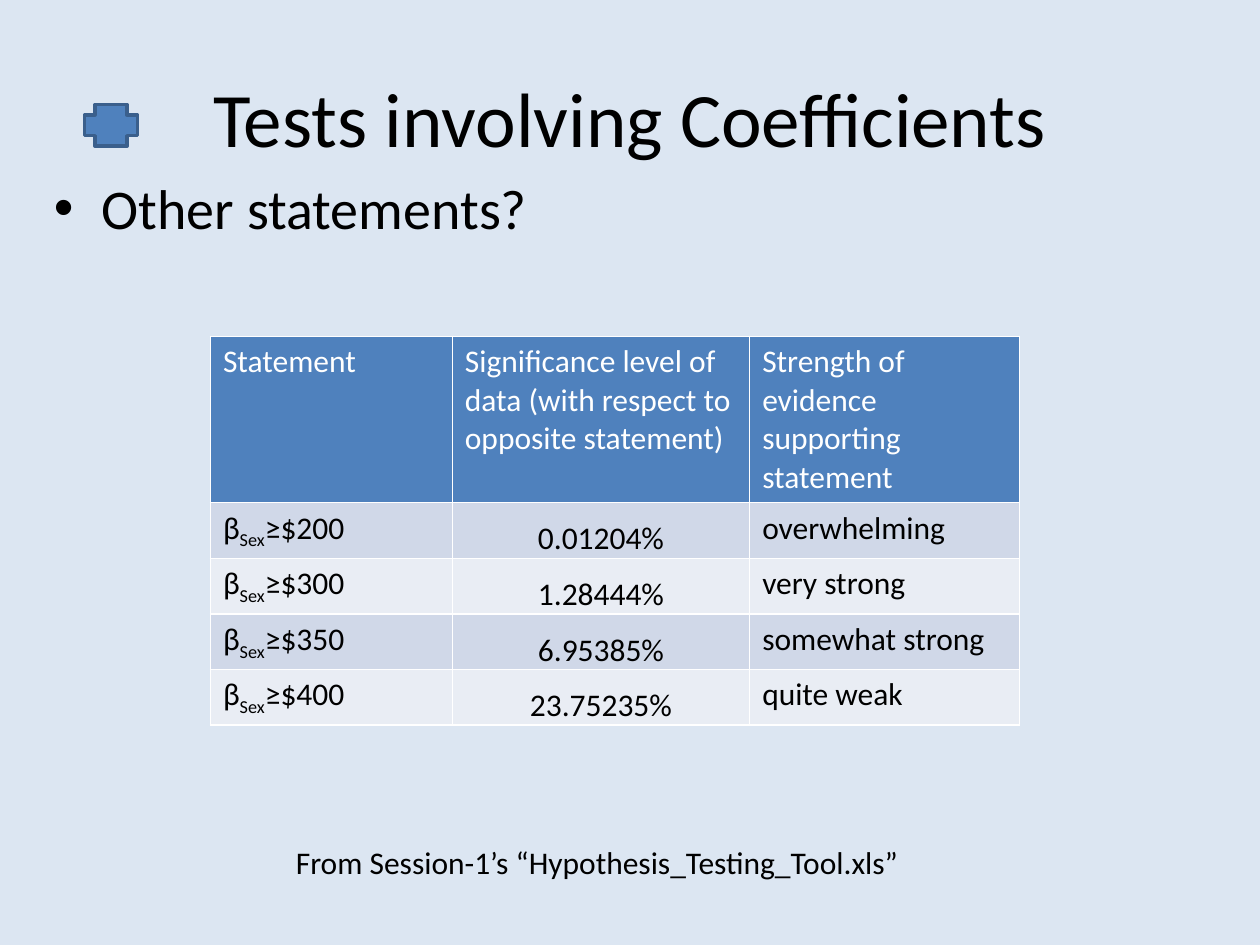
import pptx
import pptx.util
import pptx.dml.color
import pptx.enum.shapes
import pptx.enum.text
import pptx.oxml.ns
import lxml.etree

Inches = pptx.util.Inches
Pt = pptx.util.Pt
align = pptx.enum.text.PP_ALIGN
anchor = pptx.enum.text.MSO_ANCHOR
qn = pptx.oxml.ns.qn


def color(text):
    return pptx.dml.color.RGBColor.from_string(text)


def write(para, text, size, ink="000000", base=0):
    run = para.add_run()
    run.text = text
    form = {"name": "Calibri", "size": Pt(size), "bold": False}
    for key, value in form.items():
        setattr(run.font, key, value)
    run.font.color.rgb = color(ink)
    if base:
        run.font._element.set("baseline", str(base))


deck = pptx.Presentation()
deck.slide_width = Inches(10)
deck.slide_height = Inches(7.5)
slide = deck.slides.add_slide(deck.slide_layouts[6])
slide.background.fill.solid()
slide.background.fill.fore_color.rgb = color("DCE6F2")

texts = [
    ("Tests involving Coefficients", 44, (0.5, 0.3, 9, 1.25), anchor.MIDDLE, align.CENTER),
    ("Other statements?", 32, (0.33, 1.33, 9.33, 1), anchor.TOP, align.LEFT),
    ("From Session-1’s “Hypothesis_Testing_Tool.xls”", 18, (2.25, 6.64, 5.9, 0.4), anchor.TOP, align.LEFT),
]
for text, size, spot, hold, side in texts:
    box = slide.shapes.add_textbox(*map(Inches, spot))
    form = {"word_wrap": True, "vertical_anchor": hold}
    for key, value in form.items():
        setattr(box.text_frame, key, value)
    para = box.text_frame.paragraphs[0]
    para.alignment = side
    write(para, text, size)
    if size == 32:
        props = para._p.get_or_add_pPr()
        props.set("marL", str(Inches(0.38)))
        props.set("indent", str(-Inches(0.38)))
        lxml.etree.SubElement(props, qn("a:buFont"), typeface="Arial")
        lxml.etree.SubElement(props, qn("a:buChar"), char="•")
        para.space_before = Pt(6.4)

rows = [
    ("Statement", "Significance level of data (with respect to opposite statement)",
     "Strength of evidence supporting statement"),
    ("≥$200", "0.01204%", "overwhelming"),
    ("≥$300", "1.28444%", "very strong"),
    ("≥$350", "6.95385%", "somewhat strong"),
    ("≥$400", "23.75235%", "quite weak"),
]
wides = [1.92, 2.36, 2.14]
highs = [1.32] + [0.44] * 4
frame = slide.shapes.add_table(
    len(rows), len(wides), Inches(1.67), Inches(2.67), Inches(sum(wides)), Inches(sum(highs)))
table = frame.table
for col, wide in zip(table.columns, wides):
    col.width = Inches(wide)
for row, high in zip(table.rows, highs):
    row.height = Inches(high)

tight = {
    "margin_left": Inches(0.01), "margin_right": Inches(0.01),
    "margin_top": Inches(0.01), "margin_bottom": 0,
    "vertical_anchor": anchor.BOTTOM,
}
for i, row in enumerate(rows):
    for j, text in enumerate(row):
        cell = table.cell(i, j)
        props = cell._tc.get_or_add_tcPr()
        for edge in "LRTB":
            line = lxml.etree.SubElement(props, qn("a:ln" + edge), w=str(Pt(1)))
            fill = lxml.etree.SubElement(line, qn("a:solidFill"))
            lxml.etree.SubElement(fill, qn("a:srgbClr"), val="FFFFFF")
        cell.fill.solid()
        cell.fill.fore_color.rgb = color("4F81BD" if i == 0 else "D0D8E8" if i % 2 else "E9EDF4")
        para = cell.text_frame.paragraphs[0]
        if i and j == 0:
            write(para, "β", 18)
            write(para, "Sex", 18, base=-25000)
        if i and j == 1:
            para.alignment = align.CENTER
            for key, value in tight.items():
                setattr(cell, key, value)
        write(para, text, 18, "000000" if i else "FFFFFF")

plus = slide.shapes.add_shape(
    pptx.enum.shapes.MSO_SHAPE.CROSS, Inches(0.67), Inches(0.83), Inches(0.42), Inches(0.33))
plus.shadow.inherit = False
plus.fill.solid()
plus.fill.fore_color.rgb = color("4F81BD")
plus.line.color.rgb = color("3A5F8C")
plus.line.width = Pt(2)

deck.save("out.pptx")
